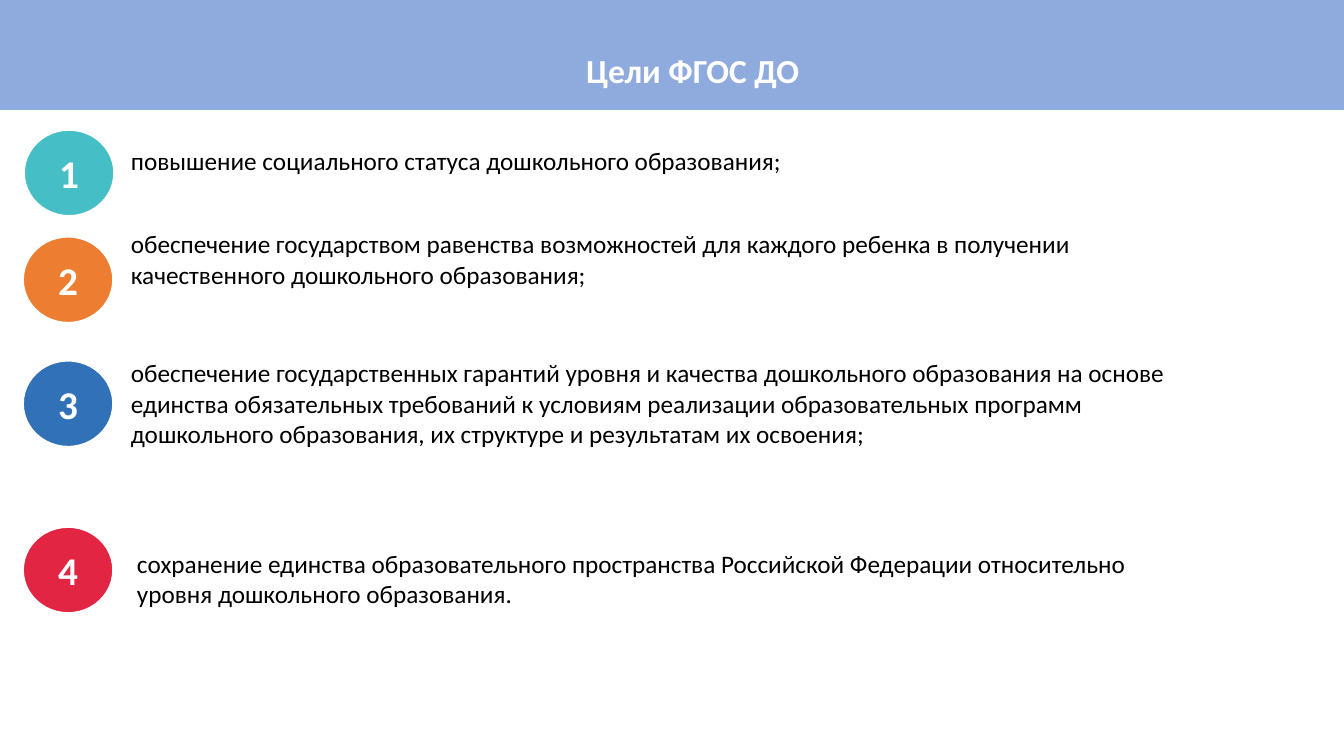
from pptx import Presentation
from pptx.dml.color import RGBColor
from pptx.enum.shapes import MSO_SHAPE
from pptx.enum.text import MSO_ANCHOR, PP_ALIGN
from pptx.util import Inches, Pt

RECT, OVAL = MSO_SHAPE.RECTANGLE, MSO_SHAPE.OVAL
MIDDLE, TOP = MSO_ANCHOR.MIDDLE, MSO_ANCHOR.TOP
CENTER, LEFT = PP_ALIGN.CENTER, PP_ALIGN.LEFT
TITLE_ONLY = 5


def rgb(value):
    return RGBColor.from_string(value)


def write(tf, text, size=18, color="000000", bold=False, align=LEFT,
          anchor=TOP, wrap=True, font="Calibri", spacing=None):
    tf.word_wrap = wrap
    tf.vertical_anchor = anchor
    p = tf.paragraphs[0]
    p.alignment = align
    p.line_spacing = spacing
    r = p.add_run()
    r.text = text
    r.font.name = font
    r.font.size = Pt(size)
    r.font.bold = bold
    r.font.color.rgb = rgb(color)


class GoalsSlide:
    white = "FFFFFF"
    band_color = "8FAADC"
    badge_size = (0.89, 0.85)

    def __init__(self, prs):
        self.s = prs.slides.add_slide(prs.slide_layouts[TITLE_ONLY])

    def shape(self, kind, box, fill, line=None):
        sp = self.s.shapes.add_shape(kind, *map(Inches, box))
        sp.shadow.inherit = False
        sp.fill.solid()
        sp.fill.fore_color.rgb = rgb(fill)
        if line:
            sp.line.color.rgb = rgb(line)
            sp.line.width = Pt(1)
        else:
            sp.line.fill.background()
        return sp

    def title(self, text, box):
        sp = self.s.shapes.title
        sp.left, sp.top, sp.width, sp.height = map(Inches, box)
        write(sp.text_frame, text, size=24, color=self.white, bold=True,
              align=CENTER, anchor=MIDDLE, spacing=0.9)

    def band(self, box):
        sp = self.shape(RECT, box, self.band_color)
        # Keep the band behind the title
        self.s.shapes.title.element.addprevious(sp.element)

    def badge(self, number, left, top, fill):
        sp = self.shape(OVAL, (left, top, *self.badge_size), fill, self.white)
        write(sp.text_frame, str(number), size=28, color=self.white,
              bold=True, align=CENTER, anchor=MIDDLE)

    def text(self, text, box, **fmt):
        sp = self.s.shapes.add_textbox(*map(Inches, box))
        write(sp.text_frame, text, **fmt)


# Badge left, badge top, badge colour, text box, wrap, text
GOALS = [
    (0.24, 1.29, "45BEC6", (1.2, 1.39, 6.72, 0.4), False,
     "повышение социального статуса дошкольного образования;"),
    (0.23, 2.35, "ED7D31", (1.2, 2.22, 10.94, 0.71), True,
     "обеспечение государством равенства возможностей для каждого ребенка "
     "в получении качественного дошкольного образования;"),
    (0.23, 3.58, "3171B8", (1.2, 3.5, 10.81, 1.01), True,
     "обеспечение государственных гарантий уровня и качества дошкольного "
     "образования на основе единства обязательных требований к условиям "
     "реализации образовательных программ дошкольного образования, "
     "их структуре и результатам их освоения;"),
    (0.23, 5.23, "E22543", (1.26, 5.39, 10.75, 0.71), True,
     "сохранение единства образовательного пространства Российской Федерации "
     "относительно уровня дошкольного образования."),
]


def main():
    prs = Presentation()
    prs.slide_width, prs.slide_height = Inches(13.33), Inches(7.5)
    slide = GoalsSlide(prs)

    # Header
    slide.band((0, 0, 13.33, 1.09))
    slide.title("Цели ФГОС ДО", (1.12, 0, 11.5, 1.45))

    # Numbered goals
    for number, (left, top, fill, box, wrap, text) in enumerate(GOALS, 1):
        slide.badge(number, left, top, fill)
        slide.text(text, box, wrap=wrap)

    prs.save("out.pptx")


if __name__ == "__main__":
    main()
